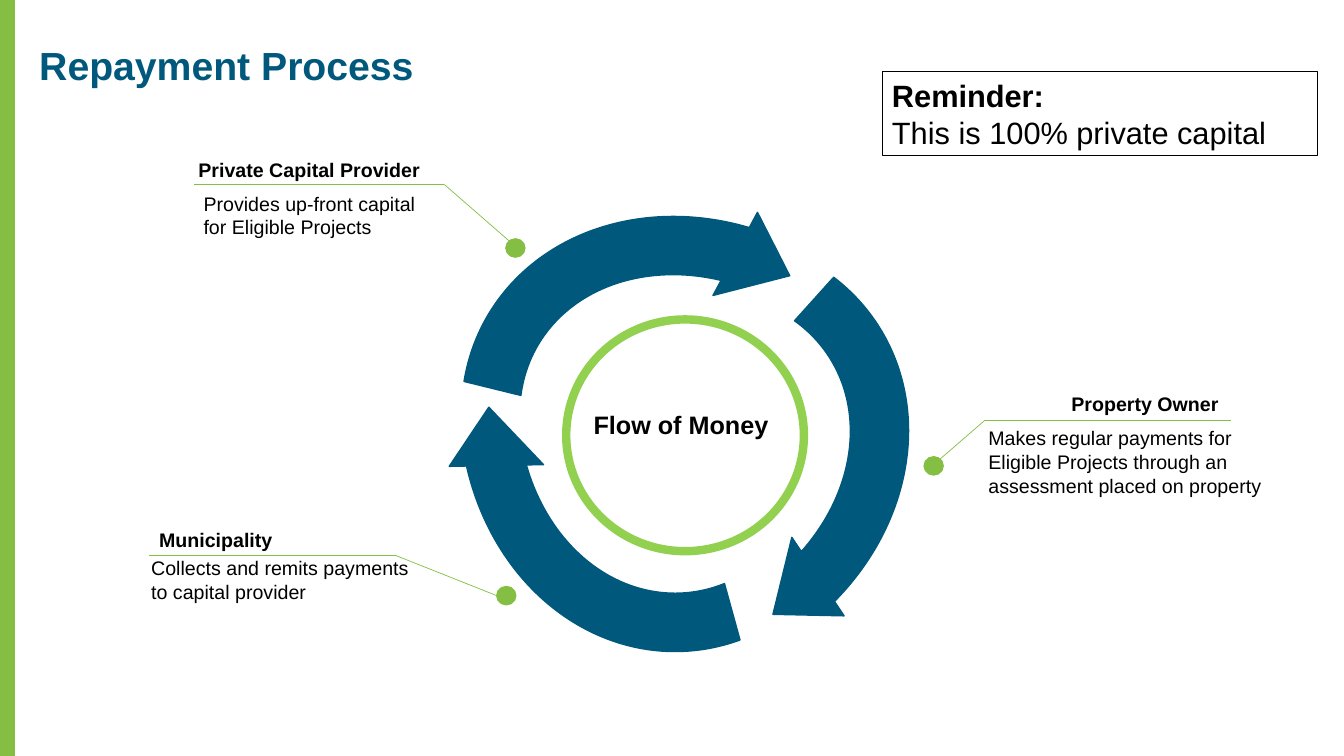
from dataclasses import dataclass
from lxml import etree
from pptx import Presentation
from pptx import util as u
from pptx.dml import color
from pptx.enum import shapes, text
from pptx.oxml import ns

Kind = shapes.MSO_SHAPE


@dataclass(frozen=True)
class Theme:
    font: str = "Arial"
    blue: str = "00597C"
    green: str = "84BF43"
    lime: str = "92D050"
    black: str = "000000"
    title: int = 28
    note: int = 22
    hub: int = 18
    body: int = 14


T = Theme()

# Arrows: left, top, turn in degrees
ARROWS = [(11.81, 4.39, 299.2), (11.13, 3.48, 180), (11, 4.88, 57.4)]
BEND = (0.125, 10.798, 204.577, 152.766, 0.101)

# Callouts: dot corner, line points, heading and body with their boxes
CALLS = [
    dict(dot=(12.75, 6.02),
         route=[(12.83, 6.07), (11.2, 4.65), (4.88, 4.65)],
         head=("Private Capital Provider", (4.75, 3.86, 6.6, 0.86)),
         body=("Provides up-front capital for Eligible Projects",
               (4.88, 4.7, 6.2, 1.45))),
    dict(dot=(12.52, 14.78),
         route=[(12.52, 15.01), (9.98, 14), (3.76, 14)],
         head=("Municipality", (3.76, 13.18, 5.64, 0.86)),
         body=("Collects and remits payments to capital provider",
               (3.56, 13.89, 7.16, 1.45))),
    dict(dot=(23.29, 11.51),
         route=[(23.7, 11.56), (24.82, 10.59), (31.01, 10.59)],
         head=("Property Owner", (26.75, 9.75, 5.64, 0.86)),
         body=("Makes regular payments for Eligible Projects through an "
               "assessment placed on property", (24.66, 10.62, 7.49, 2.06))),
]


def rgb(tint):
    return color.RGBColor.from_string(tint)


def cm(nums):
    return [u.Cm(n) for n in nums]


def apply(item, form):
    for key, val in form.items():
        setattr(item, key, val)


def stroke(item, tint, width):
    item.line.color.rgb = rgb(tint)
    item.line.width = u.Pt(width)


def shape(slide, kind, box, fill=None, line=None, width=1):
    item = slide.shapes.add_shape(kind, *cm(box))
    item.shadow.inherit = False
    if fill:
        item.fill.solid()
        item.fill.fore_color.rgb = rgb(fill)
    else:
        item.fill.background()
    if line:
        stroke(item, line, width)
    else:
        item.line.fill.background()
    return item


def write(item, rows, size, tint=T.black, **form):
    """Fill a shape with rows of (words, bold)."""
    frame = item.text_frame
    apply(frame, dict(word_wrap=True, vertical_anchor=text.MSO_ANCHOR.TOP) | form)
    for num, (words, bold) in enumerate(rows):
        para = frame.add_paragraph() if num else frame.paragraphs[0]
        para.alignment = text.PP_ALIGN.LEFT
        run = para.add_run()
        run.text = words
        apply(run.font, dict(name=T.font, size=u.Pt(size), bold=bold))
        run.font.color.rgb = rgb(tint)
    return frame


def label(slide, box, words, size, bold=False, tint=T.black):
    item = slide.shapes.add_textbox(*cm(box))
    return write(item, [(words, bold)], size, tint)


def link(slide, start, end):
    item = slide.shapes.add_connector(shapes.MSO_CONNECTOR.STRAIGHT,
                                      *cm(start + end))
    stroke(item, T.green, 0.5)
    etree.SubElement(item._element.spPr, ns.qn("a:effectLst"))


def arrow(slide, left, top, turn):
    item = shape(slide, Kind.CIRCULAR_ARROW, (left, top, 11.76, 13.39),
                 T.blue, T.blue)
    item.rotation = turn
    for num, val in enumerate(BEND):
        item.adjustments[num] = val


def callout(slide, dot, route, head, body):
    shape(slide, Kind.OVAL, dot + (0.48, 0.46), T.green, T.green)
    for start, end in zip(route, route[1:]):
        link(slide, start, end)
    for (words, box), bold in ((head, True), (body, False)):
        label(slide, box, words, T.body, bold)


def main():
    deck = Presentation()
    apply(deck, dict(slide_width=u.Cm(33.87), slide_height=u.Cm(19.05)))
    slide = deck.slides.add_slide(deck.slide_layouts[6])

    # Side bar and title
    shape(slide, Kind.RECTANGLE, (0, 0, 0.38, 19.05), T.green)
    title = label(slide, (0.74, 1.04, 32.26, 2.44), "Repayment Process",
                  T.title, True, T.blue)
    title.paragraphs[0].line_spacing = 0.9

    # Cycle and callouts
    for spot in ARROWS:
        arrow(slide, *spot)
    for call in CALLS:
        callout(slide, **call)

    # Hub
    shape(slide, Kind.FLOWCHART_CONNECTOR, (14.27, 8.05, 5.99, 5.84),
          line=T.lime, width=6)
    label(slide, (14.71, 10.19, 5.13, 1.02), "Flow of Money", T.hub, True)

    # Reminder
    note = shape(slide, Kind.RECTANGLE, (22.23, 1.8, 10.97, 2.13),
                 line=T.black, width=0.75)
    write(note, [("Reminder:", True), ("This is 100% private capital", False)],
          T.note, vertical_anchor=text.MSO_ANCHOR.MIDDLE)

    deck.save("out.pptx")


if __name__ == "__main__":
    main()
